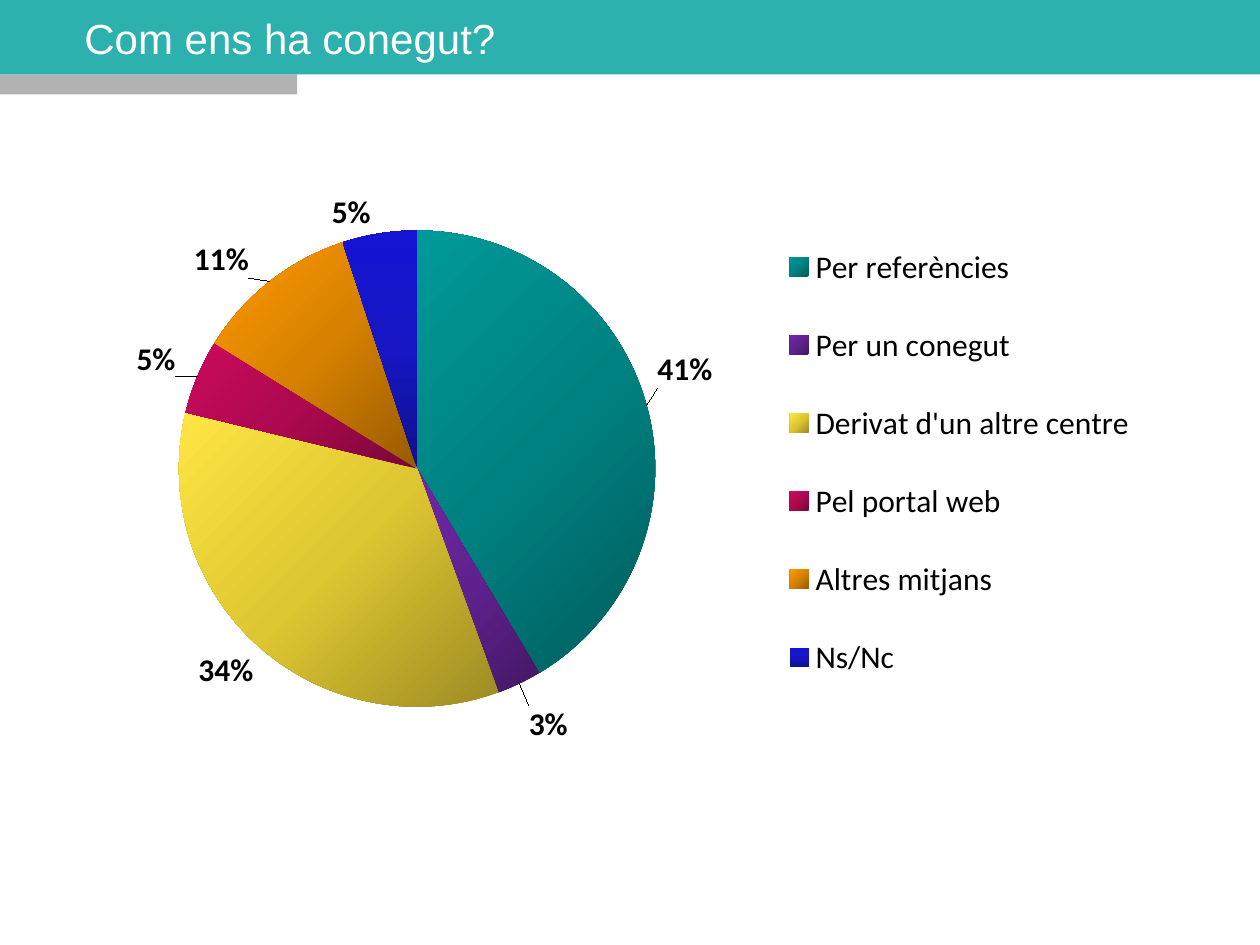
"""Build a slide with a pie chart of how clients came to know the centre."""
import pptx
import pptx.chart.data
import pptx.dml.color
import pptx.enum.chart
import pptx.enum.shapes
import pptx.enum.text
import pptx.oxml
import pptx.oxml.ns
import pptx.util

Inches, Pt = pptx.util.Inches, pptx.util.Pt
RGBColor = pptx.dml.color.RGBColor
qn, nsdecls = pptx.oxml.ns.qn, pptx.oxml.ns.nsdecls

TEAL = RGBColor(0x2C, 0xB1, 0xAE)
GREY = RGBColor(0xB2, 0xB2, 0xB2)
WHITE = RGBColor(0xFF, 0xFF, 0xFF)
BLACK = RGBColor(0, 0, 0)
CHART_W, CHART_H = 9.11, 5.74

SLICES = [
    ("Per referències", 41, ("005B5B", "008181", "009999"), 225, (0.03, -0.12)),
    ("Per un conegut", 3, ("431764", "5F218E", "7128A8"), 225, (0.05, 0.12)),
    ("Derivat d'un altre centre", 34, ("9C8B23", "DEC631", "FFE543"), 225, (0, 0)),
    ("Pel portal web", 5, ("790637", "AC094F", "CC0A5D"), 225, (-0.12, 0.04)),
    ("Altres mitjans", 11, ("975B00", "D78100", "FF9900"), 225, (-0.13, 0.02)),
    ("Ns/Nc", 5, ("10108C", "1616C4", "1414D2"), 270, (-0.06, 0.04)),
]


def layout_xml(x, y, w=None, h=None, inner=False):
    xml = f'<c:layout {nsdecls("c")}><c:manualLayout>'
    if inner:
        xml += '<c:layoutTarget val="inner"/>'
    if w is not None:
        xml += '<c:xMode val="edge"/><c:yMode val="edge"/>'
    xml += f'<c:x val="{x / CHART_W}"/><c:y val="{y / CHART_H}"/>'
    if w is not None:
        xml += f'<c:w val="{w / CHART_W}"/><c:h val="{h / CHART_H}"/>'
    return pptx.oxml.parse_xml(xml + "</c:manualLayout></c:layout>")


def set_font(font, size, name, color, bold=False):
    font.size, font.name, font.bold = Pt(size), name, bold
    font.color.rgb = color


prs = pptx.Presentation()
prs.slide_width, prs.slide_height = Inches(10), Inches(7.5)
s = prs.slides.add_slide(prs.slide_layouts[6])

for top, width, height, color in [(0.59, 2.36, 0.16, GREY), (0, 10, 0.59, TEAL)]:
    sp = s.shapes.add_shape(pptx.enum.shapes.MSO_SHAPE.RECTANGLE,
                            0, Inches(top), Inches(width), Inches(height))
    sp.shadow.inherit = False
    sp.fill.solid()
    sp.fill.fore_color.rgb = color
    sp.line.fill.background()

title = s.shapes.add_textbox(Inches(0.67), 0, Inches(9.17), Inches(0.59))
tf = title.text_frame
tf.word_wrap = True
tf.margin_left = tf.margin_right = tf.margin_top = tf.margin_bottom = 0
tf.vertical_anchor = pptx.enum.text.MSO_ANCHOR.MIDDLE
tf.text = "Com ens ha conegut?"
set_font(tf.paragraphs[0].runs[0].font, 24, "Arial", WHITE)

data = pptx.chart.data.CategoryChartData()
data.categories = [row[0] for row in SLICES]
data.add_series("Series 1", [row[1] for row in SLICES])
chart = s.shapes.add_chart(pptx.enum.chart.XL_CHART_TYPE.PIE, Inches(0.35), Inches(0.83),
                           Inches(CHART_W), Inches(CHART_H), data).chart
chart.has_title = False
set_font(chart.font, 18, "Arial", BLACK)
chart.has_legend = True
legend = chart.legend
legend.position = pptx.enum.chart.XL_LEGEND_POSITION.RIGHT
legend.include_in_layout = False
set_font(legend.font, 18, "Calibri", BLACK)

plot = chart.plots[0]
plot.vary_by_categories = True
plot_area = plot._element.getparent()
for old in plot_area.findall(qn("c:layout")):
    plot_area.remove(old)
plot_area.insert(0, layout_xml(1.07, 0.96, 3.78, 3.86, inner=True))
for old in legend._element.findall(qn("c:layout")):
    legend._element.remove(old)
legend._element.find(qn("c:legendPos")).addnext(layout_xml(5.67, 0.82, 3.19, 4.04))

series = plot.series[0]
outside = pptx.enum.chart.XL_LABEL_POSITION.OUTSIDE_END
labels = series.data_labels
labels.show_value, labels.show_percentage = False, True
labels.position = outside
set_font(labels.font, 18, "Calibri", BLACK, bold=True)

for i, (name, value, colors, angle, offset) in enumerate(SLICES):
    point = series.points[i]
    point.format.line.fill.background()
    stops = "".join(f'<a:gs pos="{pos}"><a:srgbClr val="{color}"/></a:gs>'
                    for pos, color in zip((0, 50000, 100000), colors))
    grad = pptx.oxml.parse_xml(
        f'<a:gradFill {nsdecls("a")} rotWithShape="1"><a:gsLst>{stops}</a:gsLst>'
        f'<a:lin ang="{angle * 60000}" scaled="0"/></a:gradFill>')
    series._element.xpath("c:dPt/c:spPr")[i].insert(0, grad)

    label = point.data_label
    label.position = outside
    set_font(label.font, 18, "Calibri", BLACK, bold=True)
    dLbl = series._element.xpath("c:dLbls/c:dLbl")[i]
    dLbl.find(qn("c:showVal")).set("val", "0")
    dLbl.find(qn("c:showPercent")).set("val", "1")
    if any(offset):
        dLbl.insert(1, layout_xml(*offset))

prs.save("out.pptx")
